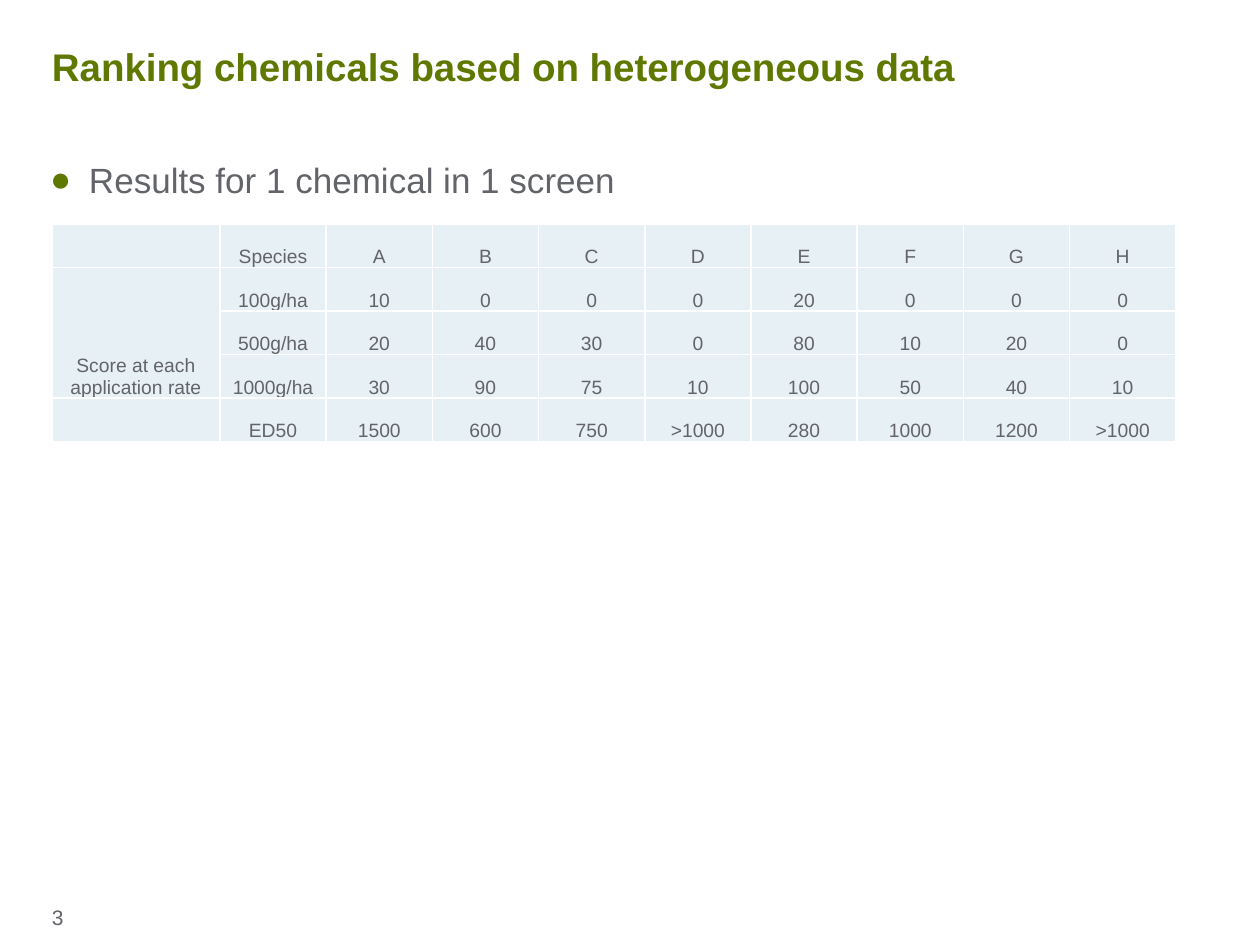
from lxml.etree import SubElement
from pptx import Presentation
from pptx.dml.color import RGBColor
from pptx.enum.text import MSO_ANCHOR as Anchor, MSO_AUTO_SIZE as AutoSize, PP_ALIGN as Align
from pptx.oxml.ns import qn
from pptx.util import Emu, Pt

SCALE = 914400 / 126
FONT = "Arial"
COLORS = {"title": "5F7800", "text": "626469", "cell": "E7F0F4", "border": "FFFFFF"}
SCORES = [
    ["", "Species", "A", "B", "C", "D", "E", "F", "G", "H"],
    ["Score at each application rate", "100g/ha", "10", "0", "0", "0", "20", "0", "0", "0"],
    ["", "500g/ha", "20", "40", "30", "0", "80", "10", "20", "0"],
    ["", "1000g/ha", "30", "90", "75", "10", "100", "50", "40", "10"],
    ["", "ED50", "1500", "600", "750", ">1000", "280", "1000", "1200", ">1000"],
]


def px(length):
    return Emu(round(length * SCALE))


def add_solid_fill(parent, color):
    fill = SubElement(parent, qn("a:solidFill"))
    SubElement(fill, qn("a:srgbClr"), val=COLORS[color])


class SlideBuilder:
    def __init__(self, slide):
        self.slide = slide

    def style(self, paragraph, size, color="text", bold=False, align=Align.LEFT):
        paragraph.alignment = align
        font = paragraph.font
        font.name, font.size, font.bold = FONT, Pt(size), bold
        font.color.rgb = RGBColor.from_string(COLORS[color])

    def set_margins(self, target, margin):
        target.margin_left = target.margin_right = px(margin)
        target.margin_top = target.margin_bottom = px(margin)

    def title(self, text, left, top, width, height):
        title = self.slide.shapes.title
        title.left, title.top, title.width, title.height = map(px, (left, top, width, height))
        frame = title.text_frame
        frame.text = text
        frame.auto_size = AutoSize.NONE
        frame.vertical_anchor = Anchor.MIDDLE
        self.set_margins(frame, 0)
        paragraph = frame.paragraphs[0]
        paragraph.line_spacing = 0.9
        self.style(paragraph, 22, "title", bold=True)

    def text(self, text, left, top, width, height, size, margin=0, bullet_indent=0):
        box = self.slide.shapes.add_textbox(*map(px, (left, top, width, height)))
        frame = box.text_frame
        frame.word_wrap = True
        self.set_margins(frame, margin)
        paragraph = frame.paragraphs[0]
        paragraph.text = text
        if bullet_indent:
            self.bullet(paragraph, bullet_indent)
        self.style(paragraph, size)

    def bullet(self, paragraph, indent):
        properties = paragraph._p.get_or_add_pPr()
        properties.set("marL", str(px(indent)))
        properties.set("indent", str(-px(indent)))
        color = SubElement(properties, qn("a:buClr"))
        SubElement(color, qn("a:srgbClr"), val=COLORS["title"])
        SubElement(properties, qn("a:buFont"), typeface=FONT)
        SubElement(properties, qn("a:buChar"), char="●")

    def table(self, rows, left, top, width, height, label_width):
        """Draw a table whose columns are equal except for the label column."""
        shape = self.slide.shapes.add_table(
            len(rows), len(rows[0]), *map(px, (left, top, width, height)))
        table = shape.table
        table.first_row = table.horz_banding = False
        for column in table.columns:
            column.width = px((width - label_width) / (len(rows[0]) - 1))
        table.columns[0].width = px(label_width)
        for row, values in zip(table.rows, rows):
            row.height = px(height / len(rows))
            for cell, value in zip(row.cells, values):
                self.cell(cell, value)
        return table

    def cell(self, cell, text):
        cell.text = text
        cell.vertical_anchor = Anchor.BOTTOM
        self.set_margins(cell, 1)
        cell.margin_bottom = 0
        self.style(cell.text_frame.paragraphs[0], 11, align=Align.CENTER)
        properties = cell._tc.get_or_add_tcPr()
        for side in ("lnL", "lnR", "lnT", "lnB"):
            line = SubElement(properties, qn(f"a:{side}"), w=str(Pt(1)))
            add_solid_fill(line, "border")
        cell.fill.solid()
        cell.fill.fore_color.rgb = RGBColor.from_string(COLORS["cell"])


def main():
    presentation = Presentation()
    presentation.slide_width, presentation.slide_height = px(1260), px(945)
    title_only = presentation.slide_layouts[5]
    builder = SlideBuilder(presentation.slides.add_slide(title_only))

    builder.title("Ranking chemicals based on heterogeneous data", 52, 13, 1164, 112)
    builder.text("Results for 1 chemical in 1 screen", 50, 158, 1165, 651,
                 size=20, bullet_indent=39)
    scores = builder.table(SCORES, 52, 224, 1124, 218, label_width=168)
    scores.cell(1, 0).merge(scores.cell(3, 0))
    builder.text("3", 40, 893, 77, 52, size=12, margin=12)
    presentation.save("out.pptx")


if __name__ == "__main__":
    main()
